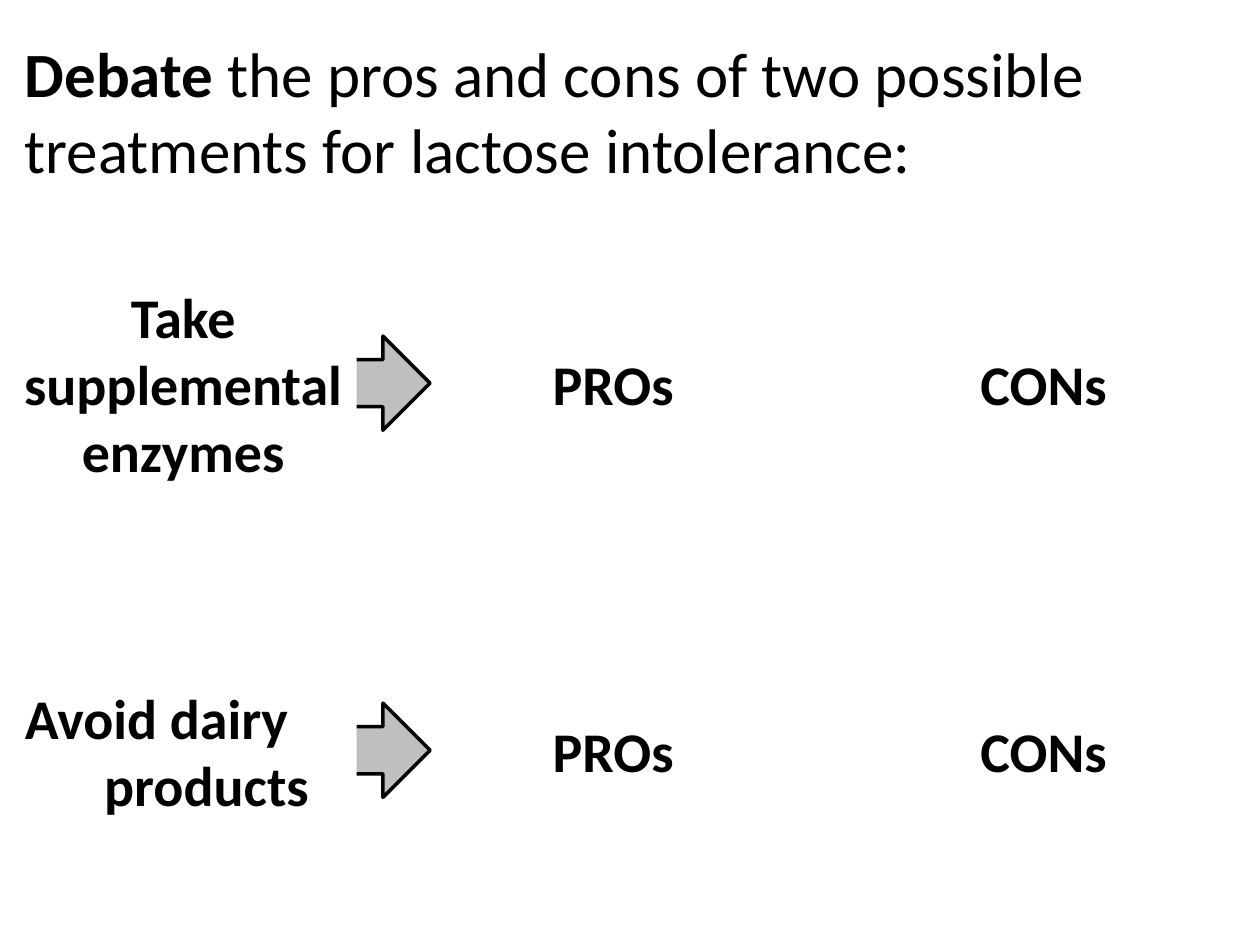
"""Build a slide for debating the pros and cons of two treatments."""
from dataclasses import dataclass

from pptx import Presentation
from pptx import util as u
from pptx.dml.color import RGBColor
from pptx.enum import shapes, text

ROW_H = 6.55
ARROW_W, ARROW_H = 2.12, 1.9
VERDICTS = {"PROs": 8.26, "CONs": 16.94}


@dataclass(frozen=True)
class Treatment:
    name: str
    top: float
    hanging: bool = False


TREATMENTS = [
    Treatment("Take supplemental enzymes", 4.45),
    Treatment("Avoid dairy products", 11.85, hanging=True),
]


def color(value: str) -> RGBColor:
    return RGBColor.from_string(value)


def style_run(r, size: float, bold: bool) -> None:
    r.font.name = "Calibri"
    r.font.size = u.Pt(size)
    r.font.bold = bold
    r.font.color.rgb = color("000000")


def add_title(s) -> None:
    sp = s.shapes.add_textbox(u.Cm(0.25), u.Cm(0.43), u.Cm(24.87), u.Cm(3.6))
    tf = sp.text_frame
    tf.word_wrap = True
    tf.vertical_anchor = text.MSO_ANCHOR.MIDDLE
    p = tf.paragraphs[0]
    for words, bold in (
        ("Debate", True),
        (" the pros and cons of two possible treatments for lactose intolerance:", False),
    ):
        r = p.add_run()
        r.text = words
        style_run(r, 36, bold)


def add_box(s, words: str, left: float, top: float, width: float):
    sp = s.shapes.add_shape(
        shapes.MSO_SHAPE.RECTANGLE, u.Cm(left), u.Cm(top), u.Cm(width), u.Cm(ROW_H)
    )
    sp.shadow.inherit = False
    sp.fill.solid()
    sp.fill.fore_color.rgb = color("FFFFFF")
    sp.line.fill.background()
    tf = sp.text_frame
    tf.word_wrap = True
    tf.vertical_anchor = text.MSO_ANCHOR.MIDDLE
    p = tf.paragraphs[0]
    p.text = words
    p.alignment = text.PP_ALIGN.CENTER
    p.space_before = u.Pt(6.4)
    style_run(p.runs[0], 32, True)
    return p


def add_arrow(s, row_top: float) -> None:
    sp = s.shapes.add_shape(
        shapes.MSO_SHAPE.RIGHT_ARROW,
        u.Cm(6.55), u.Cm(row_top + (ROW_H - ARROW_H) / 2), u.Cm(ARROW_W), u.Cm(ARROW_H),
    )
    sp.shadow.inherit = False
    sp.fill.solid()
    sp.fill.fore_color.rgb = color("BFBFBF")
    sp.line.color.rgb = color("000000")
    sp.line.width = u.Pt(2)


def add_treatment(s, treatment: Treatment) -> None:
    for verdict, left in VERDICTS.items():
        add_box(s, verdict, left, treatment.top, 8.2)
    add_arrow(s, treatment.top)
    p = add_box(s, treatment.name, 0.2, treatment.top, 6.99)
    if treatment.hanging:
        p.alignment = text.PP_ALIGN.LEFT
        pPr = p._p.get_or_add_pPr()
        pPr.set("marL", str(u.Cm(1.65)))
        pPr.set("indent", str(u.Cm(-1.6)))


def main() -> None:
    prs = Presentation()
    prs.slide_width, prs.slide_height = u.Cm(25.4), u.Cm(19.05)
    s = prs.slides.add_slide(prs.slide_layouts[6])
    add_title(s)
    for treatment in TREATMENTS:
        add_treatment(s, treatment)
    prs.save("out.pptx")


if __name__ == "__main__":
    main()
